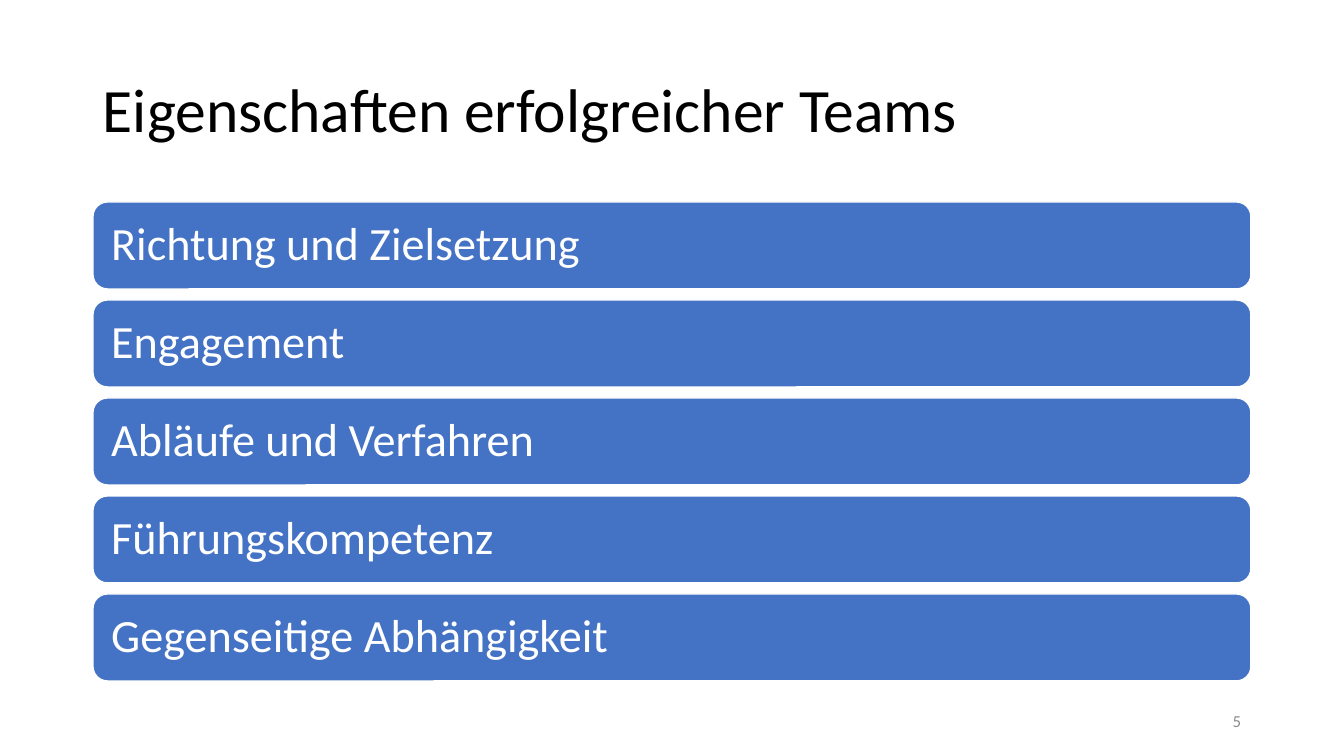
from pptx import Presentation
from pptx.dml.color import RGBColor
from pptx.enum import shapes, text
from pptx.util import Pt

TITLE = "Eigenschaften erfolgreicher Teams"
TRAITS = [
    "Richtung und Zielsetzung",
    "Engagement",
    "Abläufe und Verfahren",
    "Führungskompetenz",
    "Gegenseitige Abhängigkeit",
]
PAGE_NUMBER = "5"

COLORS = {"title": "000000", "bar": "4472C4", "white": "FFFFFF", "page": "8C8C8C"}
FONT = "Calibri"
EMU_PER_PX = 914400 / 100.8

LEFT, WIDTH = 93, 1158
BAR_TOP, BAR_HEIGHT, BAR_GAP = 202, 87, 11
BAR_INSET = 14


def px(n):
    return round(n * EMU_PER_PX)


def rgb(name):
    return RGBColor.from_string(COLORS[name])


def set_text(s, content, size, color, align=text.PP_ALIGN.LEFT, spacing=1.0):
    tf = s.text_frame
    tf.text = content
    tf.word_wrap = True
    tf.vertical_anchor = text.MSO_ANCHOR.MIDDLE
    p = tf.paragraphs[0]
    p.alignment = align
    p.line_spacing = spacing
    font = p.runs[0].font
    font.name = FONT
    font.size = Pt(size)
    font.color.rgb = rgb(color)


def add_bar(slide, top, label):
    s = slide.shapes.add_shape(shapes.MSO_SHAPE.ROUNDED_RECTANGLE,
                               px(LEFT), px(top), px(WIDTH), px(BAR_HEIGHT))
    s.shadow.inherit = False
    s.fill.solid()
    s.fill.fore_color.rgb = rgb("bar")
    s.line.color.rgb = rgb("white")
    s.line.width = Pt(1)
    tf = s.text_frame
    tf.margin_left = tf.margin_right = px(BAR_INSET)
    tf.margin_top = tf.margin_bottom = px(BAR_INSET)
    set_text(s, label, 33, "white", spacing=0.9)


def main():
    prs = Presentation()
    prs.slide_width, prs.slide_height = px(1344), px(756)
    slide = prs.slides.add_slide(prs.slide_layouts[6])

    title = slide.shapes.add_textbox(px(LEFT), px(40), px(WIDTH), px(146))
    set_text(title, TITLE, 44, "title", spacing=0.9)

    for i, trait in enumerate(TRAITS):
        add_bar(slide, BAR_TOP + i * (BAR_HEIGHT + BAR_GAP), trait)

    page_width = 302
    page = slide.shapes.add_textbox(px(LEFT + WIDTH - page_width), px(701),
                                    px(page_width), px(40))
    set_text(page, PAGE_NUMBER, 12, "page", align=text.PP_ALIGN.RIGHT)

    prs.save("out.pptx")


if __name__ == "__main__":
    main()
